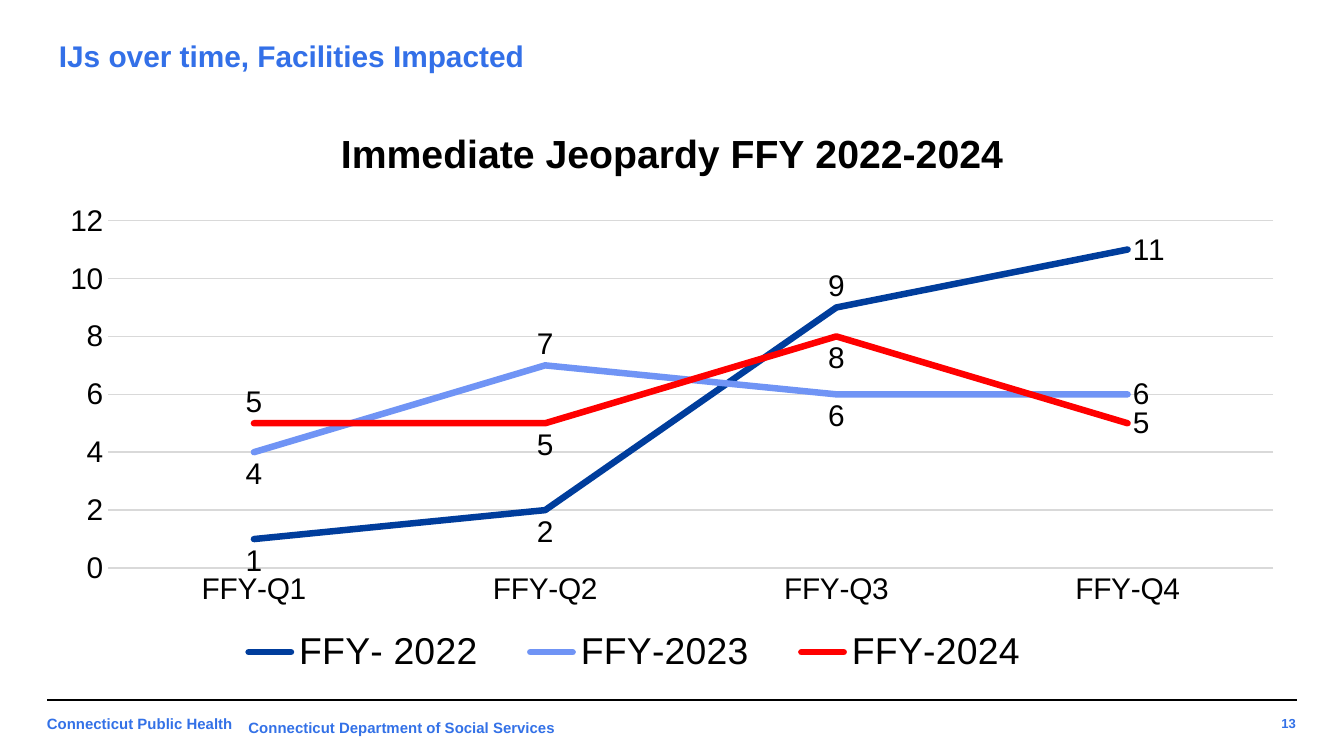
import pptx
import pptx.chart.data
import pptx.dml.color
import pptx.enum.chart
import pptx.enum.shapes
import pptx.enum.text
import pptx.oxml
import pptx.oxml.ns
import pptx.util

Inches = pptx.util.Inches
Pt = pptx.util.Pt
RGBColor = pptx.dml.color.RGBColor
Align = pptx.enum.text.PP_ALIGN
Anchor = pptx.enum.text.MSO_ANCHOR
Label = pptx.enum.chart.XL_LABEL_POSITION
qn = pptx.oxml.ns.qn

BLUE = RGBColor(0x33, 0x71, 0xE7)
TITLE_BLUE = RGBColor(0x33, 0x70, 0xE8)
NAVY = RGBColor(0x00, 0x3D, 0x9C)
PERIWINKLE = RGBColor(0x70, 0x94, 0xF5)
RED = RGBColor(0xFF, 0x00, 0x00)
BLACK = RGBColor(0x00, 0x00, 0x00)
GRID = RGBColor(0xD9, 0xD9, 0xD9)

QUARTERS = ["FFY-Q1", "FFY-Q2", "FFY-Q3", "FFY-Q4"]
YEARS = [
    ("FFY- 2022", (1, 2, 9, 11), NAVY,
     (Label.BELOW, Label.BELOW, Label.ABOVE, Label.RIGHT)),
    ("FFY-2023", (4, 7, 6, 6), PERIWINKLE,
     (Label.BELOW, Label.ABOVE, Label.BELOW, Label.RIGHT)),
    ("FFY-2024", (5, 5, 8, 5), RED,
     (Label.ABOVE, Label.BELOW, Label.BELOW, Label.RIGHT)),
]


def format_font(font, size, color=BLACK, bold=False):
    font.name = "Arial"
    font.size = Pt(size)
    font.bold = bold
    font.color.rgb = color


def write(frame, text, *, size, color, bold=True, align=Align.LEFT):
    para = frame.paragraphs[0]
    para.alignment = align
    span = para.add_run()
    span.text = text
    format_font(span.font, size, color, bold)


def place(element, index, inner=False, **fractions):
    for old in element.findall(qn("c:layout")):
        element.remove(old)
    layout = pptx.oxml.parse_xml(
        '<c:layout xmlns:c="http://schemas.openxmlformats.org/drawingml/2006/chart">'
        "<c:manualLayout/></c:layout>")
    settings = {"layoutTarget": "inner"} if inner else {}
    settings.update(xMode="edge", yMode="edge", **fractions)
    for name, value in settings.items():
        entry = layout[0].makeelement(qn("c:" + name), {"val": str(value)})
        layout[0].append(entry)
    element.insert(index, layout)


class SlideBuilder:
    def __init__(self, page):
        self.page = page

    def text(self, text, left, top, width, height, *, inset=(0.1, 0.1),
             anchor=Anchor.TOP, wrap=True, **style):
        box = self.page.shapes.add_textbox(
            Inches(left), Inches(top), Inches(width), Inches(height))
        frame = box.text_frame
        frame.word_wrap = wrap
        frame.vertical_anchor = anchor
        frame.margin_left = frame.margin_right = Inches(inset[0])
        frame.margin_top = frame.margin_bottom = Inches(inset[1])
        write(frame, text, **style)

    def rule(self, start, end, y):
        line = self.page.shapes.add_connector(
            pptx.enum.shapes.MSO_CONNECTOR.STRAIGHT,
            Inches(start), Inches(y), Inches(end), Inches(y))
        line.line.color.rgb = BLACK
        line.line.width = Pt(0.75)
        properties = line._element.spPr
        properties.append(properties.makeelement(qn("a:effectLst"), {}))

    def line_chart(self, title, left, top, width, height):
        data = pptx.chart.data.CategoryChartData()
        data.categories = QUARTERS
        for name, values, _, _ in YEARS:
            data.add_series(name, values)
        chart = self.page.shapes.add_chart(
            pptx.enum.chart.XL_CHART_TYPE.LINE, Inches(left), Inches(top),
            Inches(width), Inches(height), data).chart
        format_font(chart.font, 10)
        chart.plots[0].vary_by_categories = False
        chart.has_title = True
        write(chart.chart_title.text_frame, title,
              size=21, color=BLACK, align=Align.CENTER)
        chart.has_legend = True
        chart.legend.position = pptx.enum.chart.XL_LEGEND_POSITION.BOTTOM
        chart.legend.include_in_layout = False
        format_font(chart.legend.font, 20)
        place(chart.chart_title._element, 1, x=0.23, y=0.03)
        place(chart.legend._element, 1, x=0.13, y=0.89, w=0.68, h=0.11)
        place(chart._chartSpace.chart.plotArea, 0, inner=True,
              x=0.05, y=0.2, w=0.93, h=0.6)
        self.axes(chart)
        for series, (_, _, color, positions) in zip(chart.plots[0].series, YEARS):
            self.series(series, color, positions)

    def axes(self, chart):
        for axis in (chart.category_axis, chart.value_axis):
            axis.major_tick_mark = pptx.enum.chart.XL_TICK_MARK.NONE
            axis.minor_tick_mark = pptx.enum.chart.XL_TICK_MARK.NONE
            format_font(axis.tick_labels.font, 16)
        chart.category_axis.format.line.color.rgb = GRID
        chart.category_axis.format.line.width = Pt(1)
        scale = chart.value_axis
        scale.minimum_scale, scale.maximum_scale, scale.major_unit = 0, 12, 2
        scale.format.line.fill.background()
        scale.major_gridlines.format.line.color.rgb = GRID
        scale.major_gridlines.format.line.width = Pt(0.75)

    def series(self, series, color, positions):
        series.smooth = False
        series.marker.style = pptx.enum.chart.XL_MARKER_STYLE.NONE
        series.format.line.color.rgb = color
        series.format.line.width = Pt(3.5)
        series._element.spPr.find(qn("a:ln")).set("cap", "rnd")
        series.data_labels.show_value = True
        format_font(series.data_labels.font, 16)
        for index, position in enumerate(positions):
            label = series.points[index].data_label
            format_font(label.font, 16)
            label.position = position


def main():
    deck = pptx.Presentation()
    deck.slide_width = Inches(10)
    deck.slide_height = deck.slide_width * 9 // 16
    slide = SlideBuilder(deck.slides.add_slide(deck.slide_layouts[6]))
    slide.text("13", 9.14, 5.26, 0.6, 0.25, anchor=Anchor.MIDDLE,
               size=7, color=BLUE, align=Align.RIGHT)
    slide.text("Connecticut Public Health", 0.25, 5.25, 3.28, 0.34,
               size=8, color=BLUE)
    slide.rule(9.65, 0.35, 5.21)
    slide.text("IJs over time, Facilities Impacted", 0.34, 0.25, 9.32, 0.33,
               anchor=Anchor.MIDDLE, size=16, color=TITLE_BLUE)
    slide.line_chart("Immediate Jeopardy FFY 2022-2024", 0.34, 0.78, 9.32, 4.31)
    slide.text("Connecticut Department of Social Services", 1.75, 5.3, 2.51, 0.24,
               inset=(0.1, 0.05), wrap=False, size=8, color=BLUE)
    deck.save("out.pptx")


if __name__ == "__main__":
    main()
